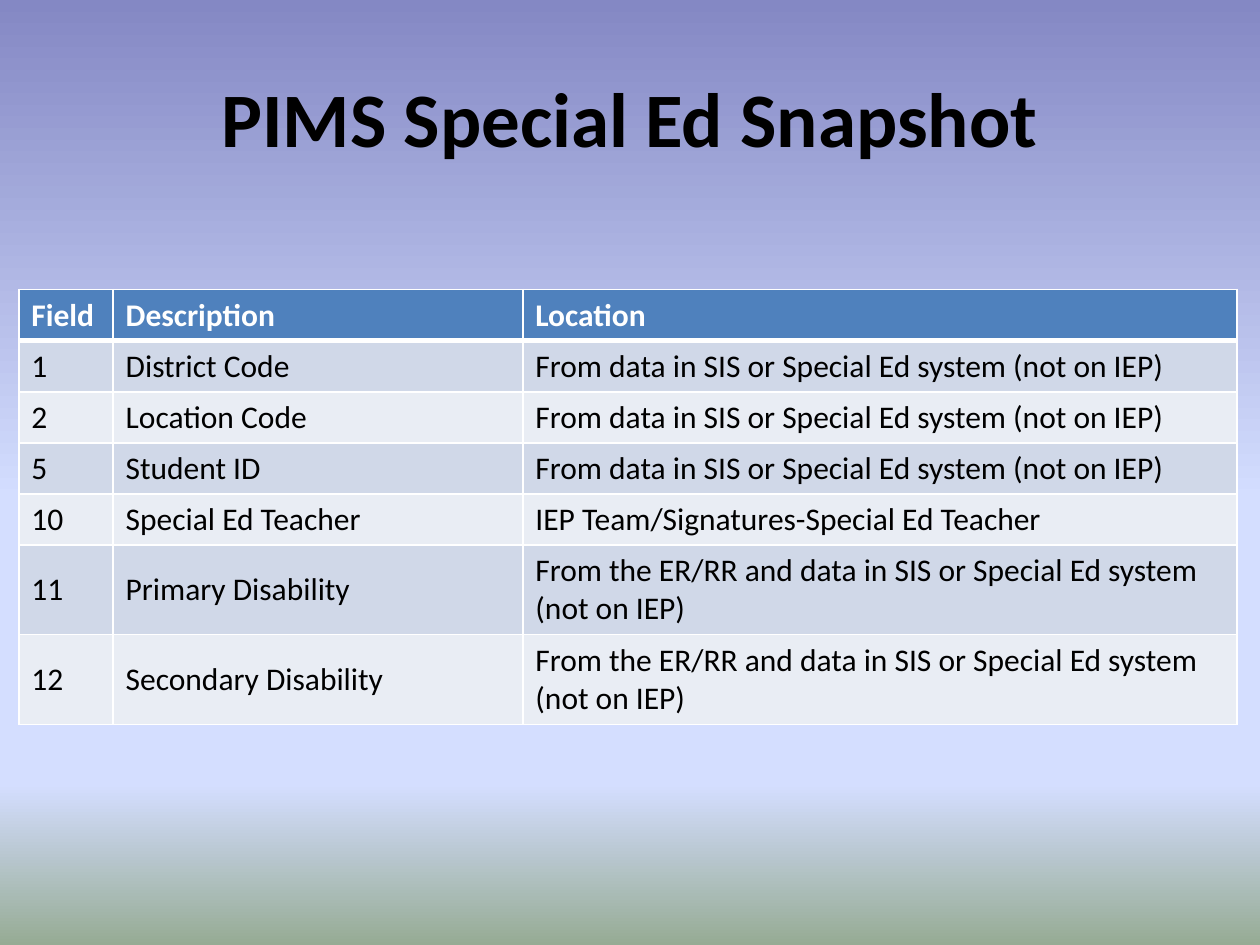
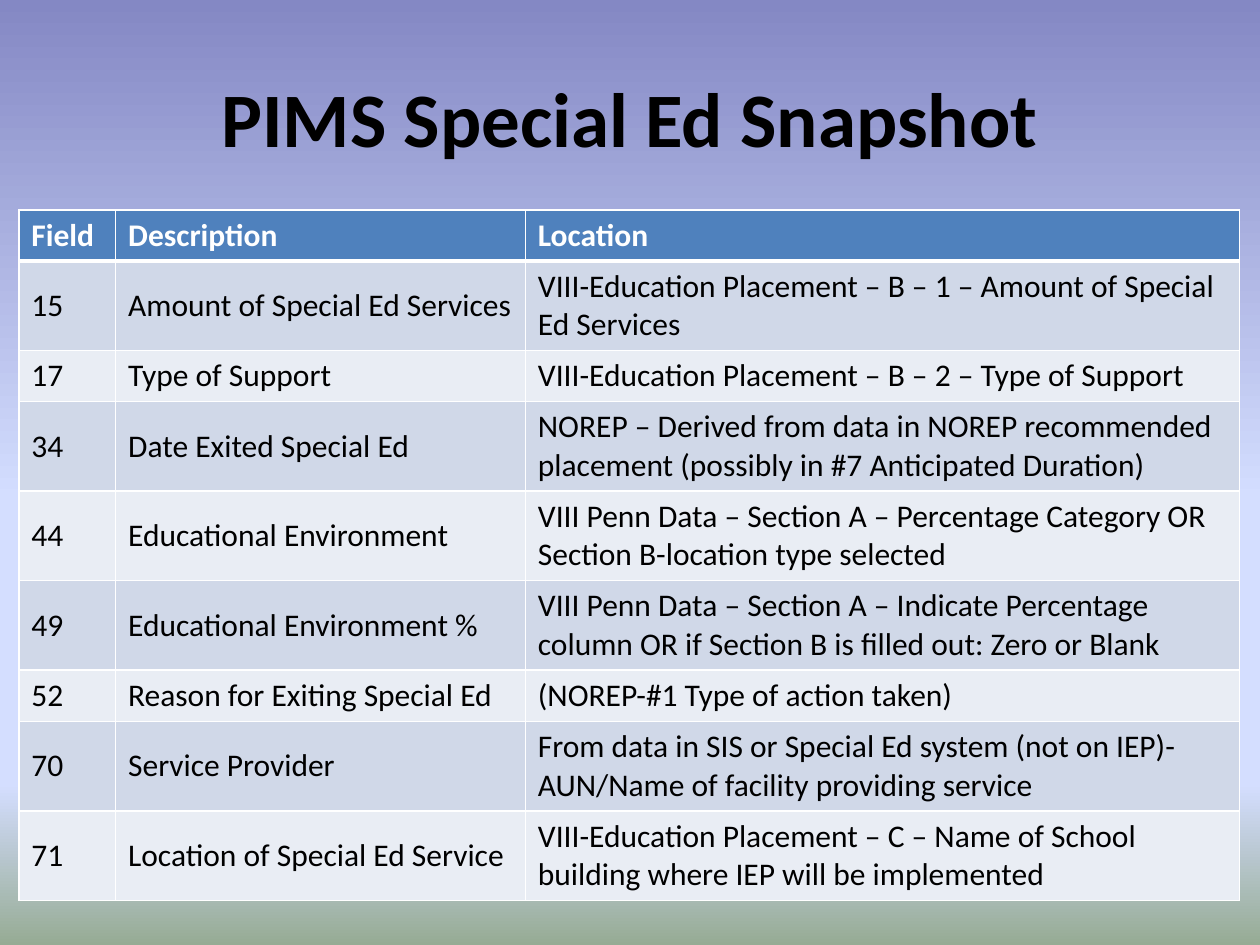
import pptx
import pptx.util
import pptx.dml.color
import pptx.enum.text
import pptx.oxml
import pptx.oxml.ns
import lxml.etree

Cm = pptx.util.Cm
Pt = pptx.util.Pt
qn = pptx.oxml.ns.qn
MIDDLE = pptx.enum.text.MSO_ANCHOR.MIDDLE
TOP = pptx.enum.text.MSO_ANCHOR.TOP

FONT = "Calibri"
BLACK = "000000"
WHITE = "FFFFFF"
HEADER_BLUE = "4F81BD"
BANDS = ["D0D8E8", "E9EDF4"]
SKY = [(0, "8488C4"), (53, "D4DEFF"), (83, "D4DEFF"), (100, "96AB94")]

TITLE = "PIMS Special Ed Snapshot"
HEADINGS = ("Field", "Description", "Location")
LINE_HEIGHT = 1.03
TWO_LINE_HEIGHT = 1.8
LOCATION_LINE_CHARS = 52
FROM_SYSTEM = "From data in SIS or Special Ed system (not on IEP)"
FROM_REPORT = "From the ER/RR and data in SIS or Special Ed system (not on IEP)"

snapshots = [
    (5.84, 1.9, [
        ("1", "District Code", FROM_SYSTEM),
        ("2", "Location Code", FROM_SYSTEM),
        ("5", "Student ID", FROM_SYSTEM),
        ("10", "Special Ed Teacher", "IEP Team/Signatures-Special Ed Teacher"),
        ("11", "Primary Disability", FROM_REPORT),
        ("12", "Secondary Disability", FROM_REPORT),
    ]),
    (4.23, 1.95, [
        ("15", "Amount of Special Ed Services",
         "VIII-Education Placement – B – 1 – Amount of Special Ed Services"),
        ("17", "Type of Support",
         "VIII-Education Placement – B – 2 – Type of Support"),
        ("34", "Date Exited Special Ed",
         "NOREP – Derived from data in NOREP recommended placement "
         "(possibly in #7 Anticipated Duration)"),
        ("44", "Educational Environment",
         "VIII Penn Data – Section A – Percentage Category OR "
         "Section B-location type selected"),
        ("49", "Educational Environment %",
         "VIII Penn Data – Section A – Indicate Percentage column OR "
         "if Section B is filled out: Zero or Blank"),
        ("52", "Reason for Exiting Special Ed", "(NOREP-#1 Type of action taken)"),
        ("70", "Service Provider",
         FROM_SYSTEM + "-AUN/Name of facility providing service"),
        ("71", "Location of Special Ed Service",
         "VIII-Education Placement – C – Name of School building "
         "where IEP will be implemented"),
    ]),
]


def rgb(hex_color):
    return pptx.dml.color.RGBColor.from_string(hex_color)


def write(text_frame, text, size, color, bold):
    run = text_frame.paragraphs[0].add_run()
    run.text = text
    run.font.name = FONT
    run.font.size = Pt(size)
    run.font.bold = bold
    run.font.color.rgb = rgb(color)


prs = pptx.Presentation()
prs.slide_width = Cm(25.4)
prs.slide_height = Cm(19.05)

sky = prs.slide_master.background.fill
sky.gradient()
sky.gradient_angle = 270
stops = prs.slide_master.element.find(".//" + qn("a:gsLst"))
for stop in list(stops):
    stops.remove(stop)
for percent, color in SKY:
    stop = lxml.etree.SubElement(stops, qn("a:gs"), pos=str(percent * 1000))
    lxml.etree.SubElement(stop, qn("a:srgbClr"), val=color)

for table_top, field_width, fields in snapshots:
    slide = prs.slides.add_slide(prs.slide_layouts[5])
    title = slide.shapes.title
    title.left, title.top, title.width, title.height = Cm(1.27), Cm(0.76), Cm(22.86), Cm(3.18)
    title.text_frame.vertical_anchor = MIDDLE
    title.text_frame.paragraphs[0].alignment = pptx.enum.text.PP_ALIGN.CENTER
    write(title.text_frame, TITLE, 44, BLACK, True)

    rows = [HEADINGS] + fields
    widths = [field_width, 8.26, 14.4]
    heights = [TWO_LINE_HEIGHT if len(row[2]) > LOCATION_LINE_CHARS else LINE_HEIGHT
               for row in rows]
    table = slide.shapes.add_table(len(rows), len(widths), Cm(0.38), Cm(table_top),
                                   Cm(sum(widths)), Cm(sum(heights))).table
    for column, width in zip(table.columns, widths):
        column.width = Cm(width)
    for r, row in enumerate(rows):
        table.rows[r].height = Cm(heights[r])
        is_header = r == 0
        for c, text in enumerate(row):
            cell = table.cell(r, c)
            edges = {"lnL": 1, "lnR": 1, "lnT": 3 if r == 1 else 1, "lnB": 3 if is_header else 1}
            for edge, points in edges.items():
                line = lxml.etree.SubElement(cell._tc.get_or_add_tcPr(), qn("a:" + edge),
                                             w=str(Pt(points)))
                line_fill = lxml.etree.SubElement(line, qn("a:solidFill"))
                lxml.etree.SubElement(line_fill, qn("a:srgbClr"), val=WHITE)
            cell.fill.solid()
            cell.fill.fore_color.rgb = rgb(HEADER_BLUE if is_header else BANDS[(r - 1) % 2])
            cell.vertical_anchor = TOP if is_header or c == 2 else MIDDLE
            write(cell.text_frame, text, 18, WHITE if is_header else BLACK, is_header)

prs.save("out.pptx")
